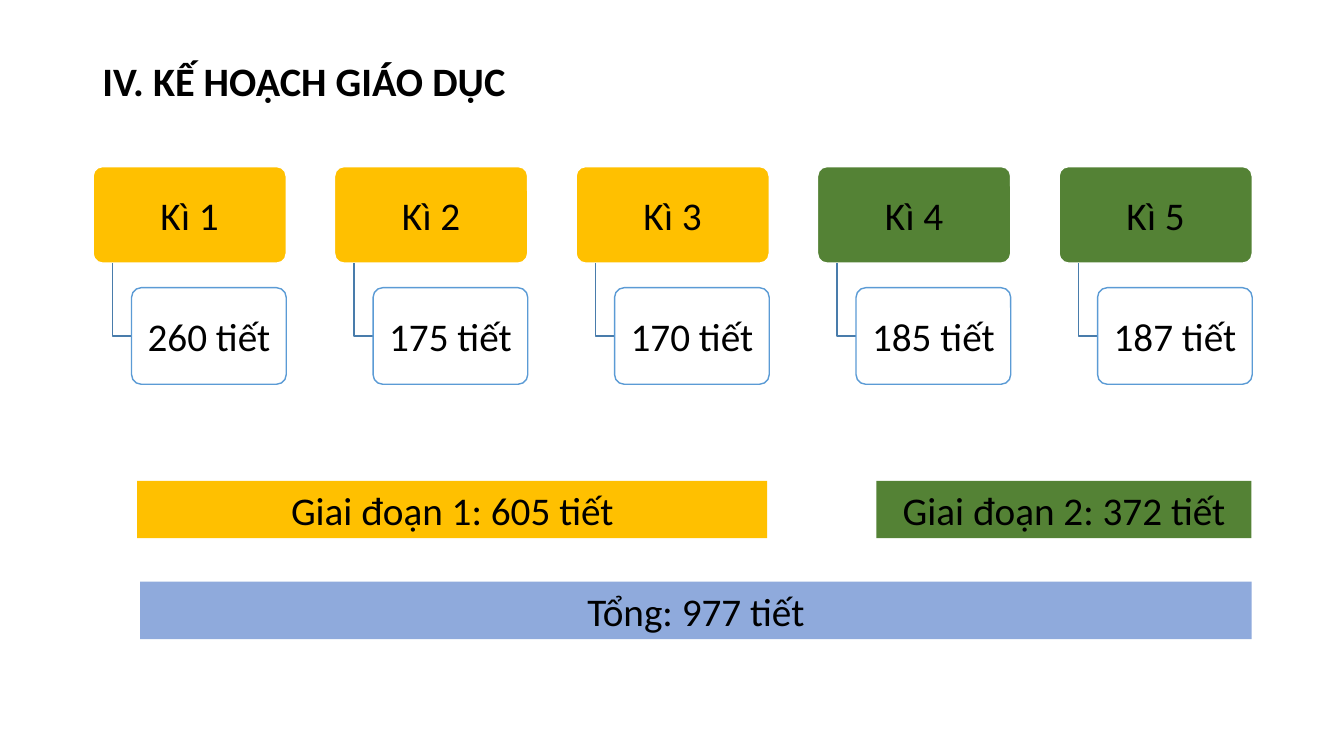
from lxml.etree import SubElement as Sub
from pptx import Presentation
from pptx.dml.color import RGBColor
from pptx.enum.shapes import MSO_SHAPE as Kind
from pptx.enum.text import MSO_ANCHOR as Anchor, MSO_AUTO_SIZE as Fit, PP_ALIGN as Align
from pptx.oxml.ns import qn
from pptx.util import Pt

GOLD, GREEN, BLUE, WHITE = "FFC000", "548235", "8FAADC", "FFFFFF"


def tint(part, color):
    part.solid()
    part.fore_color.rgb = RGBColor.from_string(color)


def block(kind, x, y, w, h, fill, line, text, pad):
    box = slide.shapes.add_shape(kind, Pt(x), Pt(y), Pt(w), Pt(h))
    box.shadow.inherit = False
    tint(box.fill, fill)
    if line:
        tint(box.line.fill, line)
        box.line.width = Pt(1)
    else:
        box.line.fill.background()
    frame = box.text_frame
    frame.word_wrap = True
    frame.vertical_anchor = Anchor.MIDDLE
    frame.margin_left = frame.margin_right = Pt(pad)
    frame.margin_top = frame.margin_bottom = Pt(3)
    para = frame.paragraphs[0]
    para.alignment = Align.CENTER
    run = para.add_run()
    run.text = text
    run.font.size = Pt(28)
    run.font.name = "Calibri"
    tint(run.font.fill, "000000")
    return box


deck = Presentation()
deck.slide_width, deck.slide_height = Pt(960), Pt(540)
slide = deck.slides.add_slide(deck.slide_layouts[5])

# Title
title = slide.shapes.title
title.left, title.top, title.width, title.height = Pt(66), Pt(39.6), Pt(828), Pt(56)
frame = title.text_frame
frame.auto_size = Fit.NONE
frame.vertical_anchor = Anchor.MIDDLE
frame.margin_bottom = Pt(20)
para = frame.paragraphs[0]
para.alignment = Align.LEFT
para.line_spacing = 0.9
run = para.add_run()
run.text = "IV. KẾ HOẠCH GIÁO DỤC"
run.font.size = Pt(28.8)
run.font.name = "Calibri"
run.font.bold = True
tint(run.font.fill, "000000")

# Terms, each with its hours hung below
left, top, wide, high = 66.5, 119, 138, 69
step, drop, dent = 172.5, 86.5, 27.5
terms = [(260, GOLD), (175, GOLD), (170, GOLD), (185, GREEN), (187, GREEN)]
for i, (hours, color) in enumerate(terms):
    x = left + i * step
    head = block(Kind.ROUNDED_RECTANGLE, x, top, wide, high, color, WHITE, f"Kì {i + 1}", 4.3)

    # Elbow from the term to its hours
    bend, mid = x + dent / 2, top + drop + high / 2
    path = slide.shapes.build_freeform(Pt(bend), Pt(top + high))
    path.add_line_segments([(Pt(bend), Pt(mid)), (Pt(x + dent), Pt(mid))], close=False)
    elbow = path.convert_to_shape()
    elbow.shadow.inherit = False
    elbow.fill.background()
    tint(elbow.line.fill, "497CAB")
    elbow.line.width = Pt(1)

    leaf = block(Kind.ROUNDED_RECTANGLE, x + dent, top + drop, wide - dent, high,
                 WHITE, "5B9BD5", f"{hours} tiết", 4.3)
    paint = leaf.fill.fore_color._xFill.find(qn("a:srgbClr"))
    Sub(paint, qn("a:alpha"), val="90000")
    for box in (head, leaf):
        box.adjustments[0] = 0.1

# Stage totals and grand total
bars = [
    (98, 343.5, 450, GOLD, "Giai đoạn 1: 605 tiết"),
    (626, 343.5, 268, GREEN, "Giai đoạn 2: 372 tiết"),
    (100, 415.5, 794, BLUE, "Tổng: 977 tiết"),
]
for x, y, w, color, text in bars:
    block(Kind.RECTANGLE, x, y, w, 41, color, None, text, 7.2)

deck.save("out.pptx")
